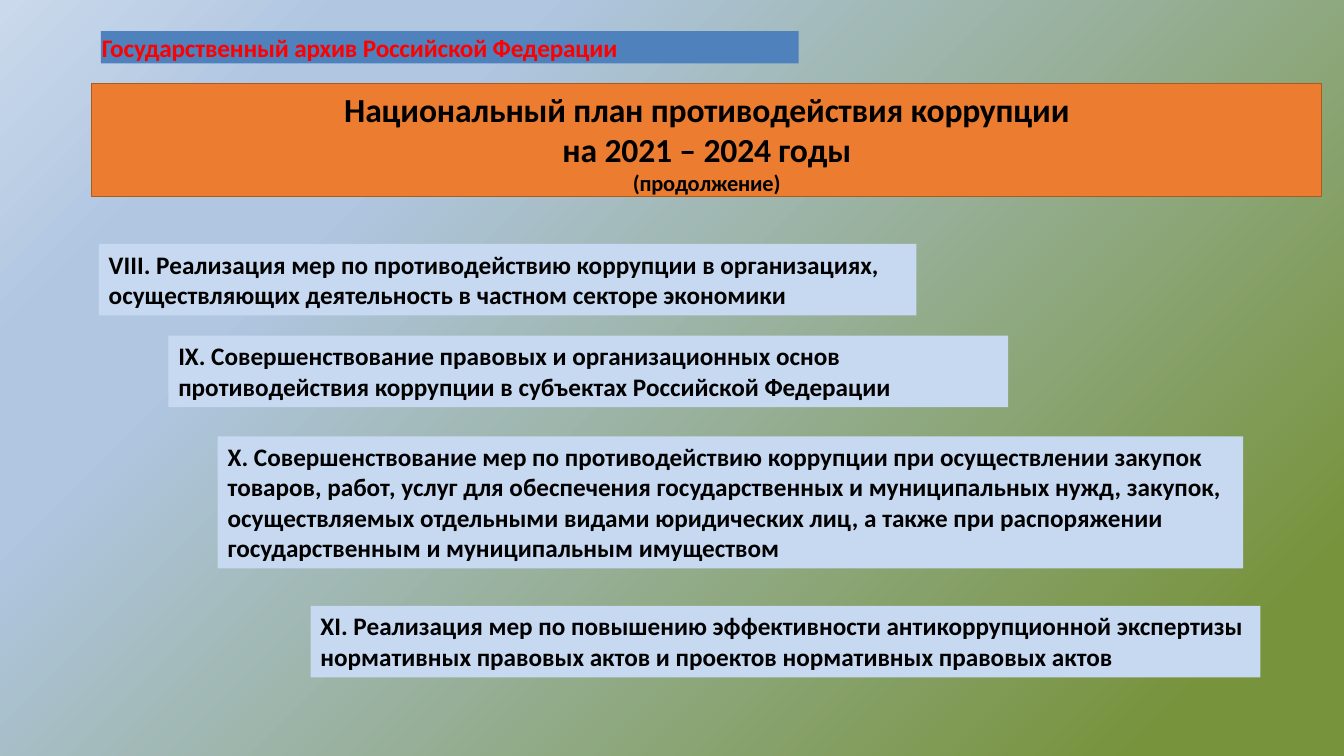
import dataclasses
import typing

import pptx
import pptx.dml.color
import pptx.enum.text
import pptx.oxml
import pptx.oxml.ns
import pptx.util

PX = 9144  # EMU in one px, at 100 px to the inch
FONT = "Calibri"
BLACK = pptx.dml.color.RGBColor(0x00, 0x00, 0x00)
RED = pptx.dml.color.RGBColor(0xFF, 0x00, 0x00)
BLUE = pptx.dml.color.RGBColor(0x4F, 0x81, 0xBD)
PALE_BLUE = pptx.dml.color.RGBColor(0xC6, 0xD9, 0xF1)
ORANGE = pptx.dml.color.RGBColor(0xEC, 0x7C, 0x30)
BROWN = pptx.dml.color.RGBColor(0xAD, 0x5A, 0x20)
BACKGROUND_STOPS = ((10, "77933C"), (74, "B0C6E1"), (83, "B0C6E1"), (100, "CAD9EB"))


class Line(typing.NamedTuple):
    text: str
    size: int = 18


@dataclasses.dataclass(frozen=True)
class Panel:
    """A filled box; lengths in px, insets as left, top, right, bottom."""
    left: int
    top: int
    width: int
    height: int
    lines: tuple[Line, ...]
    fill: pptx.dml.color.RGBColor = PALE_BLUE
    color: pptx.dml.color.RGBColor = BLACK
    insets: tuple[int, int, int, int] = (10, 5, 10, 5)
    align: pptx.enum.text.PP_ALIGN = pptx.enum.text.PP_ALIGN.LEFT
    spacing: int = 0  # hundredths of a point between letters


HEADER = Panel(100, 31, 692, 32, (Line("Государственный архив Российской Федерации"),),
               fill=BLUE, color=RED, insets=(1, 1, 0, 0), spacing=-10)
TITLE = Panel(91, 83, 1220, 112,
              (Line("Национальный план противодействия коррупции", 24),
               Line("на 2021 – 2024 годы", 24),
               Line("(продолжение)", 16)),
              fill=ORANGE, insets=(0, 5, 0, 0),
              align=pptx.enum.text.PP_ALIGN.CENTER, spacing=-10)
SECTIONS = (
    Panel(98, 242, 811, 71, (Line(
        "VIII. Реализация мер по противодействию коррупции в организациях, "
        "осуществляющих деятельность в частном секторе экономики"),)),
    Panel(167, 333, 833, 71, (Line(
        "IX. Совершенствование правовых и организационных основ "
        "противодействия коррупции в субъектах Российской Федерации"),)),
    Panel(216, 433, 1017, 131, (Line(
        "X. Совершенствование мер по противодействию коррупции при осуществлении "
        "закупок товаров, работ, услуг для обеспечения государственных и "
        "муниципальных нужд, закупок, осуществляемых отдельными видами "
        "юридических лиц, а также при распоряжении государственным и "
        "муниципальным имуществом"),)),
    Panel(308, 601, 942, 71, (Line(
        "XI. Реализация мер по повышению эффективности антикоррупционной экспертизы "
        "нормативных правовых актов и проектов нормативных правовых актов"),)),
)


def apply_format(target: typing.Any, values: dict[str, typing.Any]) -> None:
    for name, value in values.items():
        setattr(target, name, value)


def paint_background(page: typing.Any) -> None:
    """Fill the page with circles centred on its lower right corner."""
    page.background.fill.gradient()
    gradient = page.element.find(".//" + pptx.oxml.ns.qn("a:gradFill"))
    stops = "".join(
        f'<a:gs pos="{percent * 1000}"><a:srgbClr val="{color}"/></a:gs>'
        for percent, color in BACKGROUND_STOPS)
    gradient.getparent().replace(gradient, pptx.oxml.parse_xml(
        f'<a:gradFill {pptx.oxml.ns.nsdecls("a")} rotWithShape="1">'
        f'<a:gsLst>{stops}</a:gsLst>'
        '<a:path path="circle"><a:fillToRect l="100000" t="100000"/></a:path>'
        '</a:gradFill>'))


def format_panel(box: typing.Any, panel: Panel) -> None:
    """Place the box, colour it and write the panel's lines in it."""
    apply_format(box, {name: getattr(panel, name) * PX
                       for name in ("left", "top", "width", "height")})
    box.fill.solid()
    box.fill.fore_color.rgb = panel.fill
    frame = box.text_frame
    sides = ("margin_left", "margin_top", "margin_right", "margin_bottom")
    apply_format(frame, {side: inset * PX for side, inset in zip(sides, panel.insets)})
    apply_format(frame, {
        "word_wrap": True,
        "auto_size": pptx.enum.text.MSO_AUTO_SIZE.SHAPE_TO_FIT_TEXT,
        "vertical_anchor": pptx.enum.text.MSO_ANCHOR.TOP,
    })
    para = frame.paragraphs[0]
    para.alignment = panel.align
    for index, line in enumerate(panel.lines):
        if index:
            para.add_line_break()
        span = para.add_run()
        span.text = line.text
        apply_format(span.font, {"name": FONT, "size": pptx.util.Pt(line.size), "bold": True})
        span.font.color.rgb = panel.color
        if panel.spacing:
            span.font._element.set("spc", str(panel.spacing))


def main() -> None:
    deck = pptx.Presentation()
    apply_format(deck, {"slide_width": 1333 * PX, "slide_height": 750 * PX})
    page = deck.slides.add_slide(deck.slide_layouts.get_by_name("Title Only"))
    paint_background(page)
    title = page.shapes.title
    format_panel(title, TITLE)
    title.line.color.rgb = BROWN
    title.line.width = pptx.util.Pt(0.96)
    for panel in (HEADER, *SECTIONS):
        format_panel(page.shapes.add_textbox(0, 0, 0, 0), panel)
    deck.save("out.pptx")


if __name__ == "__main__":
    main()
